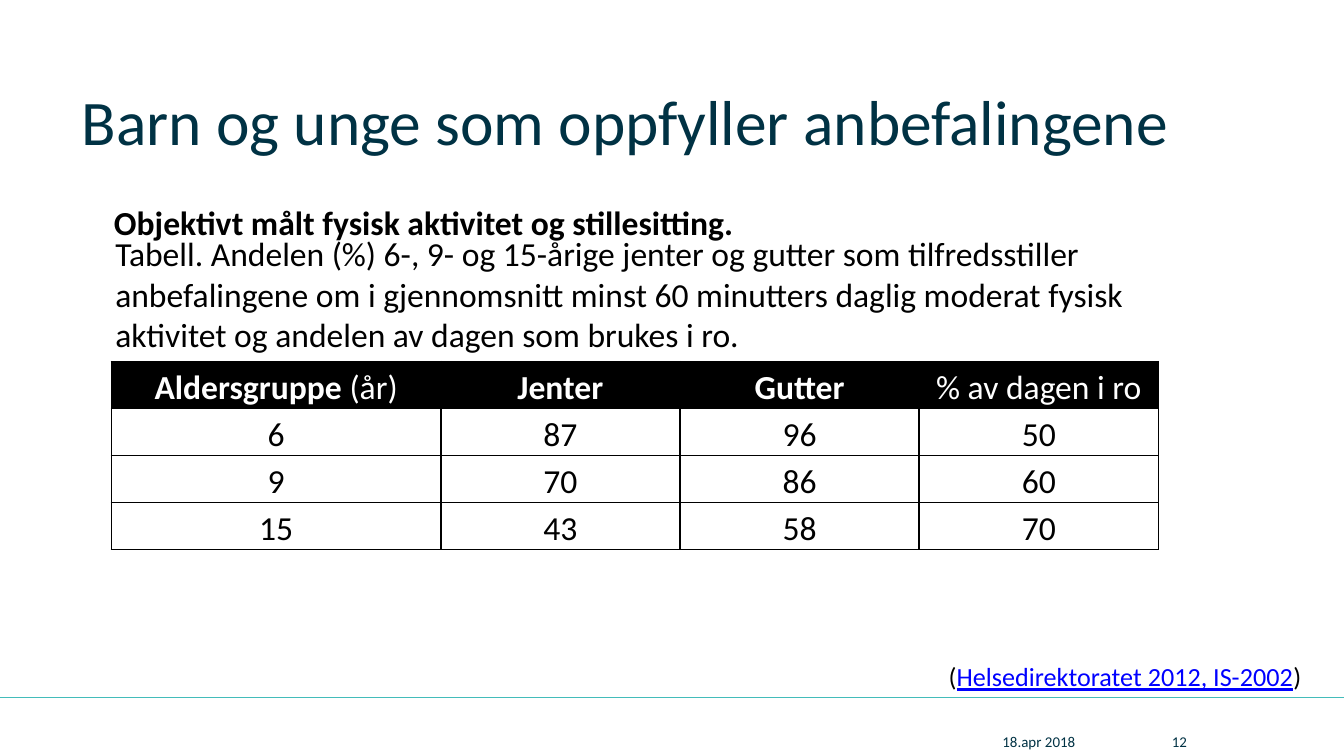
from lxml.etree import SubElement
from pptx import Presentation
from pptx.dml.color import RGBColor
from pptx.enum.shapes import MSO_CONNECTOR
from pptx.enum.text import MSO_ANCHOR, PP_ALIGN
from pptx.oxml.ns import qn
from pptx.util import Inches, Pt

BLACK = RGBColor(0x00, 0x00, 0x00)
WHITE = RGBColor(0xFF, 0xFF, 0xFF)
NAVY = RGBColor(0x00, 0x32, 0x44)
TEAL = RGBColor(0x43, 0xBC, 0xBA)
LINK_BLUE = RGBColor(0x00, 0x00, 0xFF)


def add_span(para, text, size=18, color=BLACK, bold=False, underline=False):
    span = para.add_run()
    span.text = text
    font = span.font
    font.name = "Calibri"
    font.size = Pt(size)
    font.color.rgb = color
    font.bold = bold
    font.underline = underline


def add_cell_borders(cell, color=BLACK, width=1):
    properties = cell._tc.get_or_add_tcPr()
    for side in ("a:lnL", "a:lnR", "a:lnT", "a:lnB"):
        border = SubElement(properties, qn(side), w=str(Pt(width)))
        fill = SubElement(border, qn("a:solidFill"))
        SubElement(fill, qn("a:srgbClr"), val=str(color))


class SlideBuilder:
    def __init__(self, slide):
        self.slide = slide

    def line(self, left, top, right, bottom, color, width=1):
        line = self.slide.shapes.add_connector(
            MSO_CONNECTOR.STRAIGHT,
            Inches(left), Inches(top), Inches(right), Inches(bottom))
        line.line.color.rgb = color
        line.line.width = Pt(width)
        SubElement(line._element.spPr, qn("a:effectLst"))

    def text(self, left, top, width, height, paragraphs,
             anchor=MSO_ANCHOR.MIDDLE, wrap=False, **style):
        """Add a box; each paragraph is a list of (text, own format) spans."""
        box = self.slide.shapes.add_textbox(
            Inches(left), Inches(top), Inches(width), Inches(height))
        frame = box.text_frame
        frame.word_wrap = wrap
        frame.vertical_anchor = anchor
        for index, spans in enumerate(paragraphs):
            para = frame.add_paragraph() if index else frame.paragraphs[0]
            for text, own_style in spans:
                add_span(para, text, **{**style, **own_style})

    def table(self, left, top, column_widths, row_height, header, rows):
        table = self.slide.shapes.add_table(
            len(rows) + 1, len(header), Inches(left), Inches(top),
            Inches(sum(column_widths)),
            Inches(row_height * (len(rows) + 1))).table
        for column, width in zip(table.columns, column_widths):
            column.width = Inches(width)
        for row in table.rows:
            row.height = Inches(row_height)
        for index, spans in enumerate(header):
            self.cell(table.cell(0, index), spans, WHITE, BLACK)
        for row_index, values in enumerate(rows, start=1):
            for index, value in enumerate(values):
                anchor = MSO_ANCHOR.TOP if index else MSO_ANCHOR.MIDDLE
                self.cell(table.cell(row_index, index),
                          [(str(value), False)], BLACK, anchor=anchor)

    def cell(self, cell, spans, color, fill=None, anchor=MSO_ANCHOR.TOP):
        cell.margin_left = cell.margin_right = Inches(0.07)
        cell.margin_top = cell.margin_bottom = 0
        cell.vertical_anchor = anchor
        add_cell_borders(cell)
        if fill is None:
            cell.fill.background()
        else:
            cell.fill.solid()
            cell.fill.fore_color.rgb = fill
        para = cell.text_frame.paragraphs[0]
        para.alignment = PP_ALIGN.CENTER
        para.line_spacing = 1.15
        for text, bold in spans:
            add_span(para, text, color=color, bold=bold)


def main():
    deck = Presentation()
    deck.slide_width = Inches(10)
    deck.slide_height = Inches(10 * 9 / 16)
    page = SlideBuilder(deck.slides.add_slide(deck.slide_layouts[6]))

    page.line(0, 5.19, 10, 5.19, TEAL)
    page.text(0.51, 0.55, 8.98, 0.68,
              [[("Barn og unge som oppfyller anbefalingene", {})]],
              anchor=MSO_ANCHOR.BOTTOM, wrap=True, size=34, color=NAVY)

    page.table(
        0.83, 2.69, [2.45, 1.78, 1.78, 1.78], 0.35,
        header=[[("Aldersgruppe ", True), ("(år)", False)],
                [("Jenter", True)],
                [("Gutter", True)],
                [("% av dagen i ro", False)]],
        rows=[(6, 87, 96, 50), (9, 70, 86, 60), (15, 43, 58, 70)])

    for left, width, text in ((7.36, 1.18, "18.apr 2018"), (8.62, 0.71, "12")):
        page.text(left, 5.46, width, 0.12, [[(text, {})]],
                  wrap=True, size=8, color=NAVY)

    caption = (
        "Tabell. Andelen (%) 6-, 9- og 15-årige jenter og gutter som tilfredsstiller",
        "anbefalingene om i gjennomsnitt minst 60 minutters daglig moderat fysisk",
        "aktivitet og andelen av dagen som brukes i ro.")
    page.text(0.76, 1.68, 7.86, 1.01, [[(text, {})] for text in caption])
    page.text(6.96, 4.86, 2.85, 0.34,
              [[("(", {}),
                ("Helsedirektoratet 2012, IS-2002",
                 {"color": LINK_BLUE, "underline": True}),
                (")", {})]], size=14)
    page.text(0.75, 1.45, 4.86, 0.4,
              [[("Objektivt målt fysisk aktivitet og stillesitting.", {})]],
              anchor=MSO_ANCHOR.TOP, bold=True)

    deck.save("out.pptx")


if __name__ == "__main__":
    main()
